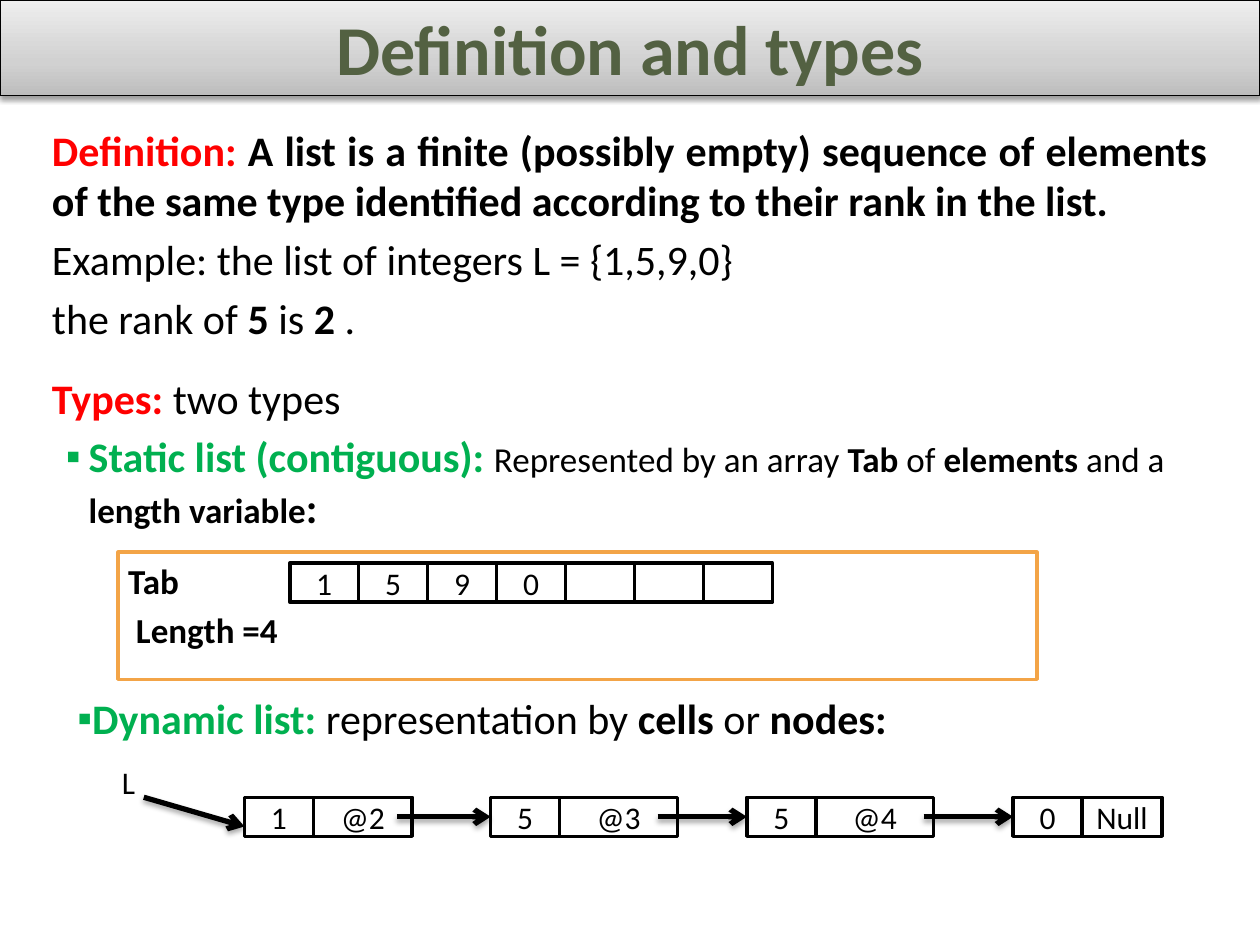
from lxml import etree
from pptx import Presentation
from pptx.dml.color import RGBColor
from pptx.enum.shapes import MSO_CONNECTOR, MSO_SHAPE
from pptx.enum.text import MSO_ANCHOR, MSO_AUTO_SIZE, PP_ALIGN
from pptx.oxml import parse_xml
from pptx.oxml.ns import nsdecls, qn
from pptx.util import Pt

RECTANGLE = MSO_SHAPE.RECTANGLE
STRAIGHT = MSO_CONNECTOR.STRAIGHT
MIDDLE = MSO_ANCHOR.MIDDLE
NO_AUTOSIZE = MSO_AUTO_SIZE.NONE
CENTER, JUSTIFY, LEFT = PP_ALIGN.CENTER, PP_ALIGN.JUSTIFY, PP_ALIGN.LEFT
LEFT_SIDE = 1

COLORS = {
    "black": "000000", "white": "FFFFFF", "red": "FF0000", "green": "00B050",
    "olive": "536142", "orange": "F3A447",
}
TITLE_STOPS = [(0, "BDBDBD"), (35, "D1D1D1"), (100, "EEEEEE")]

CELL_WIDTH, CELL_HEIGHT = 39.4, 22.3
ARRAY_LEFT, ARRAY_TOP = 165.6, 321.8
ARRAY_VALUES = ["1", "5", "9", "0", "", "", ""]
NODE_TOP = 455.6
NODES = [
    (139.7, "1", "@2", 56.5),
    (280.4, "5", "@3", 67.4),
    (426.8, "5", "@4", 67.4),
    (578.9, "0", "Null", 45.7),
]
ARROW_STARTS = [226.8, 375.8, 527.8]

PLAIN = {"size": Pt(24), "bold": False}
BOLD = {"size": Pt(24), "bold": True}
SMALL = {"size": Pt(20), "bold": False}
SMALL_BOLD = {"size": Pt(20), "bold": True}
CELL_TEXT = {"size": Pt(18), "bold": False}
TITLE_TEXT = {"size": Pt(40), "bold": True}

PARAGRAPHS = [
    ({"alignment": JUSTIFY, "space_before": Pt(0)}, 0, 0, None, [
        ("Definition: ", BOLD, "red"),
        ("A list is a finite (possibly empty) sequence of elements of the same "
         "type identified according to their rank in the list.", BOLD, "black")]),
    ({"alignment": JUSTIFY}, 0, 0, None, [
        ("Example: the list of integers L = {1,5,9,0}", PLAIN, "black")]),
    ({"alignment": JUSTIFY, "space_after": Pt(12)}, 0, 0, None, [
        ("the rank of ", PLAIN, "black"), ("5 ", BOLD, "black"),
        ("is ", PLAIN, "black"), ("2 ", BOLD, "black"), (".", PLAIN, "black")]),
    ({"alignment": LEFT}, 40.5, -40.5, None, [
        ("Types: ", BOLD, "red"), ("two types", PLAIN, "black")]),
    ({"alignment": LEFT, "space_after": Pt(12)}, 21, -13, "▪", [
        ("Static list (contiguous): ", BOLD, "green"),
        ("Represented by an array ", SMALL, "black"), ("Tab ", SMALL_BOLD, "black"),
        ("of ", SMALL, "black"), ("elements ", SMALL_BOLD, "black"),
        ("and a ", SMALL, "black"), ("length variable", SMALL_BOLD, "black"),
        (":", BOLD, "black")]),
    ({"alignment": LEFT}, 43.5, 0, None, [("Tab", SMALL_BOLD, "black")]),
    ({"alignment": LEFT}, 48, 0, None, [("Length =4", SMALL_BOLD, "black")]),
    ({"alignment": LEFT, "space_before": Pt(24)}, 21, -6.5, "▪", [
        ("Dynamic list: ", BOLD, "green"), ("representation by ", PLAIN, "black"),
        ("cells ", BOLD, "black"), ("or ", PLAIN, "black"),
        ("nodes:", BOLD, "black")]),
]


def color(name):
    return RGBColor.from_string(COLORS[name])


def set_values(target, values):
    for name, value in values.items():
        setattr(target, name, value)


def place(shape, left, top, width, height):
    set_values(shape, {"left": Pt(left), "top": Pt(top),
                       "width": Pt(width), "height": Pt(height)})


def add_span(para, text, values, color_name):
    span = para.add_run()
    span.text = text
    set_values(span.font, {"name": "Calibri", **values})
    span.font.color.rgb = color(color_name)


def set_line(line, color_name, width):
    line.color.rgb = color(color_name)
    line.width = Pt(width)


def set_shadow(shape, opacity, distance):
    shape._element.spPr.append(parse_xml(
        f'<a:effectLst {nsdecls("a")}>'
        f'<a:outerShdw blurRad="{Pt(3.1)}" dist="{Pt(distance)}" dir="5400000" '
        f'rotWithShape="0"><a:srgbClr val="{COLORS["black"]}">'
        f'<a:alpha val="{opacity * 1000}"/></a:srgbClr></a:outerShdw></a:effectLst>'))


def set_bullet(para, left, indent, symbol):
    properties = para._p.get_or_add_pPr()
    properties.set("marL", str(Pt(left)))
    properties.set("indent", str(Pt(indent)))
    if symbol:
        etree.SubElement(properties, qn("a:buChar")).set("char", symbol)
    else:
        etree.SubElement(properties, qn("a:buNone"))


def fill_title(title):
    place(title, 0, 0, 720, 54.7)
    stops = "".join(
        f'<a:gs pos="{position * 1000}"><a:srgbClr val="{value}"/></a:gs>'
        for position, value in TITLE_STOPS)
    title._element.spPr.append(parse_xml(
        f'<a:gradFill {nsdecls("a")} rotWithShape="1"><a:gsLst>{stops}</a:gsLst>'
        '<a:lin ang="16200000" scaled="0"/></a:gradFill>'))
    set_line(title.line, "black", 0.75)
    set_shadow(title, 38, 1.6)
    frame = title.text_frame
    set_values(frame, {"vertical_anchor": MIDDLE, "auto_size": NO_AUTOSIZE})
    para = frame.paragraphs[0]
    para.alignment = CENTER
    add_span(para, "Definition and types", TITLE_TEXT, "olive")


def fill_body(body):
    place(body, 22.5, 67.5, 675, 438.5)
    frame = body.text_frame
    frame.auto_size = NO_AUTOSIZE
    for index, (values, left, indent, symbol, spans) in enumerate(PARAGRAPHS):
        para = frame.add_paragraph() if index else frame.paragraphs[0]
        set_bullet(para, left, indent, symbol)
        set_values(para, values)
        for span in spans:
            add_span(para, *span)


def add_box(page, left, top, width, height, text="", fill="white", line="black"):
    box = page.shapes.add_shape(RECTANGLE, Pt(left), Pt(top), Pt(width), Pt(height))
    box.shadow.inherit = False
    if fill:
        box.fill.solid()
        box.fill.fore_color.rgb = color(fill)
    else:
        box.fill.background()
    if line:
        set_line(box.line, line, 2)
    else:
        box.line.fill.background()
    if text:
        box.text_frame.vertical_anchor = MIDDLE
        para = box.text_frame.paragraphs[0]
        para.alignment = CENTER
        add_span(para, text, CELL_TEXT, "black")
    return box


def add_arrow(page, start, end, target=None):
    arrow = page.shapes.add_connector(STRAIGHT, *map(Pt, start + end))
    if target is not None:
        arrow.end_connect(target, LEFT_SIDE)
    set_line(arrow.line, "black", 3)
    etree.SubElement(arrow.line._get_or_add_ln(), qn("a:tailEnd")).set("type", "arrow")
    set_shadow(arrow, 35, 1.8)


def add_node(page, left, value, address, address_width):
    add_box(page, left + CELL_WIDTH, NODE_TOP, address_width, CELL_HEIGHT, address)
    return add_box(page, left, NODE_TOP, CELL_WIDTH, CELL_HEIGHT, value)


def main():
    deck = Presentation()
    deck.slide_width, deck.slide_height = Pt(720), Pt(540)
    page = deck.slides.add_slide(deck.slide_layouts[1])
    fill_title(page.shapes.title)
    fill_body(page.placeholders[1])
    add_box(page, 67.5, 315.5, 525, 72.7, fill=None, line="orange")
    for index, value in enumerate(ARRAY_VALUES):
        add_box(page, ARRAY_LEFT + index * CELL_WIDTH, ARRAY_TOP,
                CELL_WIDTH, CELL_HEIGHT, value)
    add_box(page, 53.8, 435.6, CELL_WIDTH, CELL_HEIGHT, "L", line=None)
    heads = [add_node(page, *node) for node in NODES]
    middle = NODE_TOP + CELL_HEIGHT / 2
    for start, node, head in zip(ARROW_STARTS, NODES[1:], heads[1:]):
        add_arrow(page, (start, middle), (node[0], middle), head)
    add_arrow(page, (82.2, NODE_TOP), (NODES[0][0], 472.3))
    deck.save("out.pptx")


if __name__ == "__main__":
    main()
